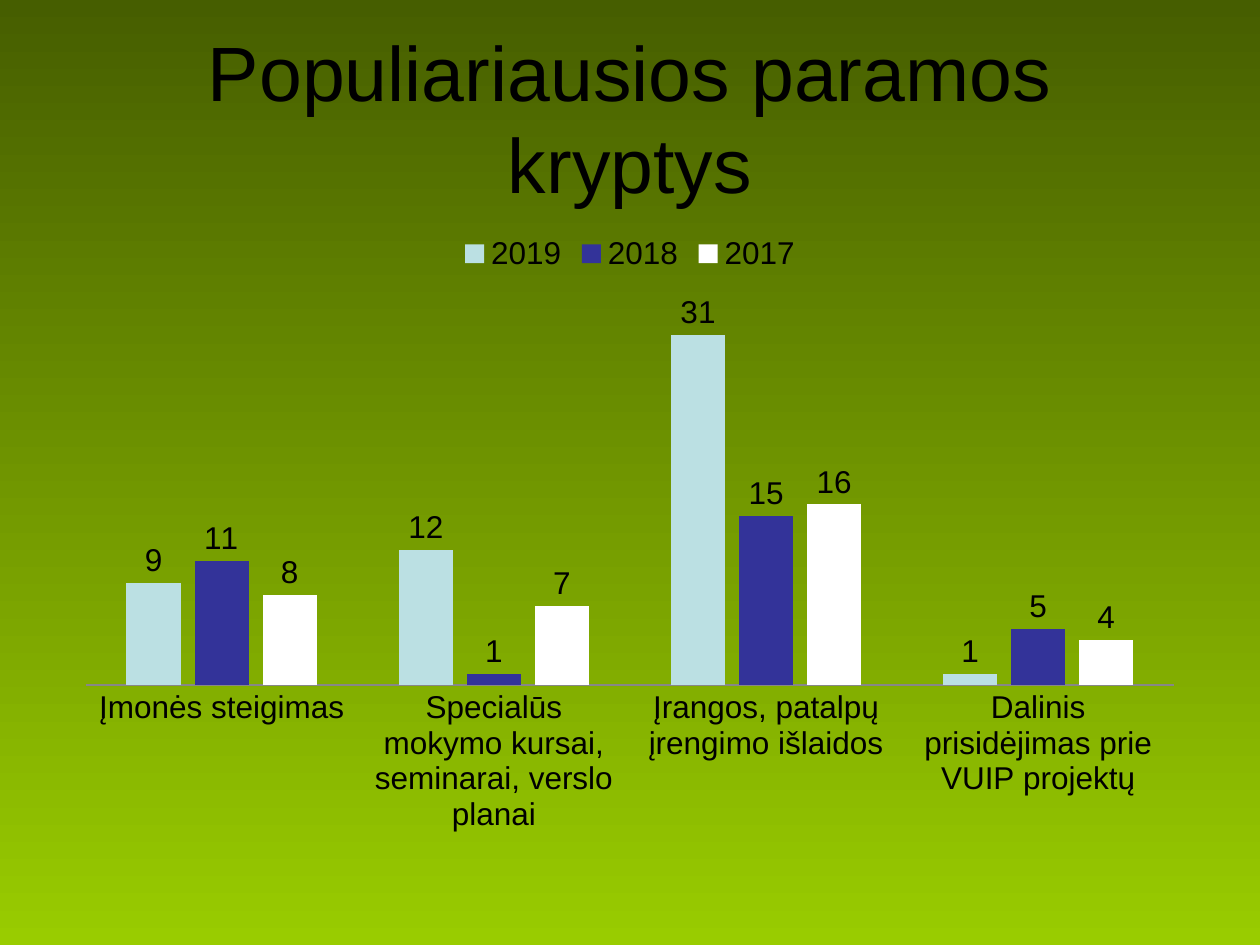
"""Build a slide with a column chart of the most popular support areas."""
import pptx
import pptx.chart.data
import pptx.dml.color
import pptx.enum.chart
import pptx.enum.text
import pptx.util
from lxml import etree

Pt = pptx.util.Pt
FONT = "Arial"
COLORS = {
    "text": "000000",
    "top": "465E00",
    "bottom": "99CC00",
    "axis": "878787",
    "2019": "BBE0E3",
    "2018": "333399",
    "2017": "FFFFFF",
}
CATEGORIES = [
    "Įmonės steigimas",
    "Specialūs mokymo kursai, seminarai, verslo planai",
    "Įrangos, patalpų įrengimo išlaidos",
    "Dalinis prisidėjimas prie VUIP projektų",
]
SERIES = {"2019": (9, 12, 31, 1), "2018": (11, 1, 15, 5), "2017": (8, 7, 16, 4)}


def color(name):
    return pptx.dml.color.RGBColor.from_string(COLORS[name])


def style_font(font, size):
    font.name = FONT
    font.size = Pt(size)
    font.color.rgb = color("text")


def paint_background(page):
    fill = page.background.fill
    fill.gradient()
    fill.gradient_angle = 270
    for stop, name in zip(fill.gradient_stops, ("top", "bottom")):
        stop.color.rgb = color(name)


def add_title(page, text):
    box = page.shapes.add_textbox(Pt(36), Pt(21.6), Pt(648), Pt(90))
    frame = box.text_frame
    frame.word_wrap = True
    frame.vertical_anchor = pptx.enum.text.MSO_ANCHOR.MIDDLE
    frame.text = text
    para = frame.paragraphs[0]
    para.alignment = pptx.enum.text.PP_ALIGN.CENTER
    style_font(para.runs[0].font, 44)


def style_axes(chart):
    values = chart.value_axis
    values.minimum_scale = 0
    values.maximum_scale = 35
    values.has_major_gridlines = False
    values.visible = False
    axis = chart.category_axis
    axis.major_tick_mark = pptx.enum.chart.XL_TICK_MARK.NONE
    axis.format.line.color.rgb = color("axis")
    axis.format.line.width = Pt(0.75)


def style_series(series):
    series.format.fill.solid()
    series.format.fill.fore_color.rgb = color(series.name)
    series.invert_if_negative = False
    labels = series.data_labels
    labels.show_value = True
    labels.position = pptx.enum.chart.XL_LABEL_POSITION.OUTSIDE_END
    style_font(labels.font, 18)


def add_column_chart(page):
    data = pptx.chart.data.CategoryChartData()
    data.categories = CATEGORIES
    for name, values in SERIES.items():
        data.add_series(name, values)
    kind = pptx.enum.chart.XL_CHART_TYPE.COLUMN_CLUSTERED
    chart = page.shapes.add_chart(
        kind, Pt(36), Pt(126), Pt(648), Pt(356.4), data
    ).chart
    style_font(chart.font, 18)
    chart.has_title = False
    chart.has_legend = True
    chart.legend.position = pptx.enum.chart.XL_LEGEND_POSITION.TOP
    chart.legend.include_in_layout = False
    style_axes(chart)
    plot = chart.plots[0]
    plot.vary_by_categories = False
    plot.gap_width = 150
    plot.overlap = -25
    for series in plot.series:
        style_series(series)


def main():
    deck = pptx.Presentation()
    deck.slide_width, deck.slide_height = Pt(720), Pt(540)
    page = deck.slides.add_slide(deck.slide_layouts[6])
    paint_background(page)
    add_title(page, "Populiariausios paramos kryptys")
    add_column_chart(page)
    deck.save("out.pptx")


if __name__ == "__main__":
    main()
